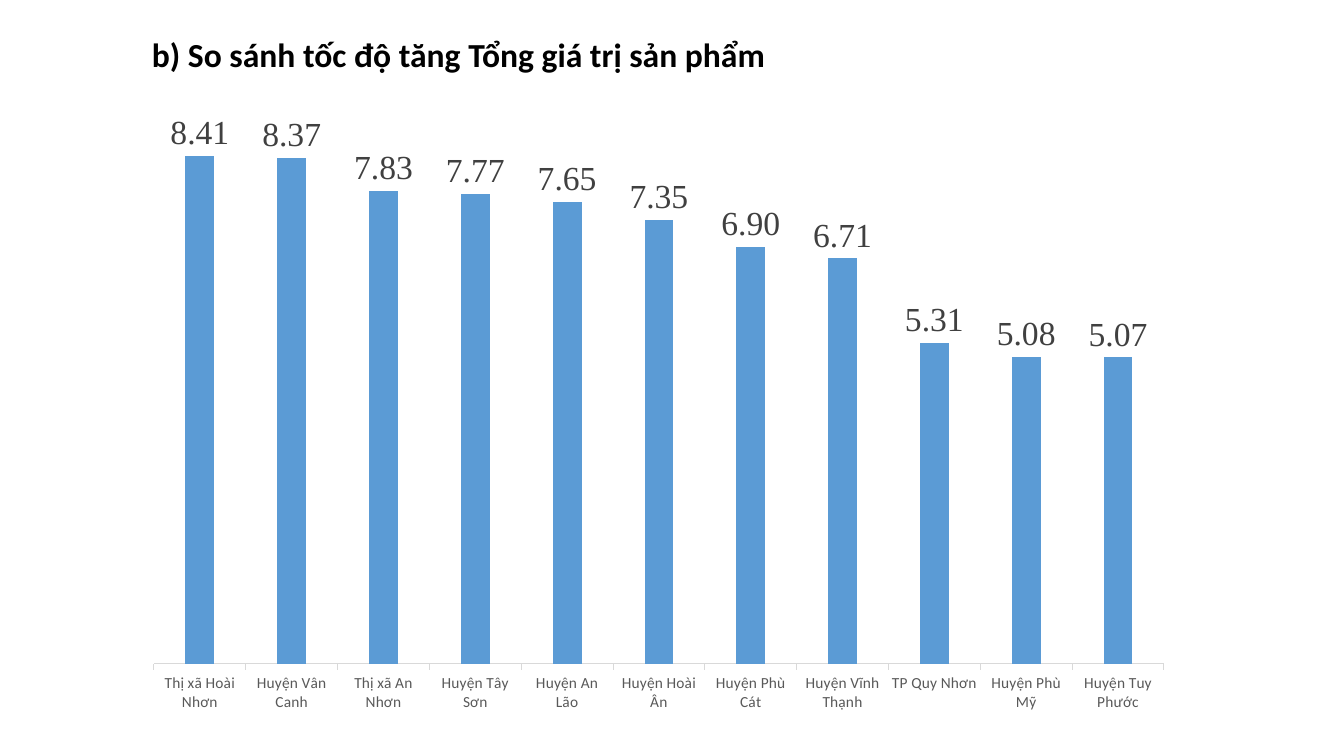
from lxml.etree import SubElement
from pptx import Presentation
from pptx.chart.data import CategoryChartData
from pptx.dml.color import RGBColor
from pptx.enum.chart import XL_CHART_TYPE as ChartType
from pptx.enum.chart import XL_LABEL_POSITION as LabelPosition
from pptx.enum.chart import XL_TICK_MARK as TickMark
from pptx.enum.text import MSO_AUTO_SIZE as AutoSize
from pptx.oxml.ns import qn
from pptx.util import Pt

TITLE = "b) So sánh tốc độ tăng Tổng giá trị sản phẩm"
GROWTH = {
    "Thị xã Hoài Nhơn": 8.41,
    "Huyện Vân Canh": 8.37,
    "Thị xã An Nhơn": 7.83,
    "Huyện Tây Sơn": 7.77,
    "Huyện An Lão": 7.65,
    "Huyện Hoài Ân": 7.35,
    "Huyện Phù Cát": 6.90,
    "Huyện Vĩnh Thạnh": 6.71,
    "TP Quy Nhơn": 5.31,
    "Huyện Phù Mỹ": 5.08,
    "Huyện Tuy Phước": 5.07,
}
COLORS = {"title": "000000", "bar": "5B9BD5", "value": "404040",
          "category": "595959", "axis": "D9D9D9"}

# Left, top, width, height in px
SLIDE_SIZE = (1344, 756)
TITLE_BOX = (142, 29, 1059, 50)
CHART_BOX = (133, 109, 1052, 616)
PLOT_BOX = (154, 120, 1010, 544)
EMU_PER_PX = 914400 / 100.8


def emu(lengths):
    return [round(length * EMU_PER_PX) for length in lengths]


def style_font(font, name, size, color, bold=False):
    font.name, font.size, font.bold = name, Pt(size), bold
    font.color.rgb = RGBColor.from_string(COLORS[color])


def place_plot(chart):
    """Fix the inner plot area at PLOT_BOX, as fractions of the chart."""
    left, top, width, height = CHART_BOX
    plot_left, plot_top, plot_width, plot_height = PLOT_BOX
    area = chart.element.find(".//" + qn("c:plotArea"))
    for old in area.findall(qn("c:layout")):
        area.remove(old)
    layout = SubElement(area, qn("c:layout"))
    area.insert(0, layout)
    manual = SubElement(layout, qn("c:manualLayout"))
    settings = {
        "layoutTarget": "inner", "xMode": "edge", "yMode": "edge",
        "x": (plot_left - left) / width, "y": (plot_top - top) / height,
        "w": plot_width / width, "h": plot_height / height,
    }
    for tag, value in settings.items():
        SubElement(manual, qn("c:" + tag)).set("val", str(value))


def add_title(page):
    box = page.shapes.add_textbox(*emu(TITLE_BOX))
    frame = box.text_frame
    frame.word_wrap = True
    frame.auto_size = AutoSize.SHAPE_TO_FIT_TEXT
    span = frame.paragraphs[0].add_run()
    span.text = TITLE
    style_font(span.font, "Calibri", 24, "title", bold=True)


def add_growth_chart(page):
    data = CategoryChartData(number_format="0.00")
    data.categories = list(GROWTH)
    data.add_series("Series 1", list(GROWTH.values()))
    chart = page.shapes.add_chart(
        ChartType.COLUMN_CLUSTERED, *emu(CHART_BOX), data).chart
    chart.has_title = chart.has_legend = False
    style_font(chart.font, "Calibri", 10, "title")

    value_axis = chart.value_axis
    value_axis.minimum_scale, value_axis.maximum_scale = 0, 9
    value_axis.has_major_gridlines = False
    value_axis.tick_labels.number_format = "0.00"
    value_axis.tick_labels.number_format_is_linked = False
    value_axis.visible = False

    category_axis = chart.category_axis
    category_axis.major_tick_mark = TickMark.OUTSIDE
    category_axis.minor_tick_mark = TickMark.NONE
    category_axis.format.line.color.rgb = RGBColor.from_string(COLORS["axis"])
    category_axis.format.line.width = Pt(0.75)
    style_font(category_axis.tick_labels.font, "Calibri", 11, "category")

    plot = chart.plots[0]
    plot.gap_width, plot.overlap = 219, -27
    plot.vary_by_categories = False
    bars = plot.series[0]
    bars.format.fill.solid()
    bars.format.fill.fore_color.rgb = RGBColor.from_string(COLORS["bar"])
    labels = bars.data_labels
    labels.show_value = True
    labels.position = LabelPosition.OUTSIDE_END
    labels.number_format = "0.00"
    labels.number_format_is_linked = False
    style_font(labels.font, "Times New Roman", 24, "value")
    place_plot(chart)


def main():
    deck = Presentation()
    deck.slide_width, deck.slide_height = emu(SLIDE_SIZE)
    page = deck.slides.add_slide(deck.slide_layouts[6])
    add_growth_chart(page)
    add_title(page)
    deck.save("out.pptx")


if __name__ == "__main__":
    main()
